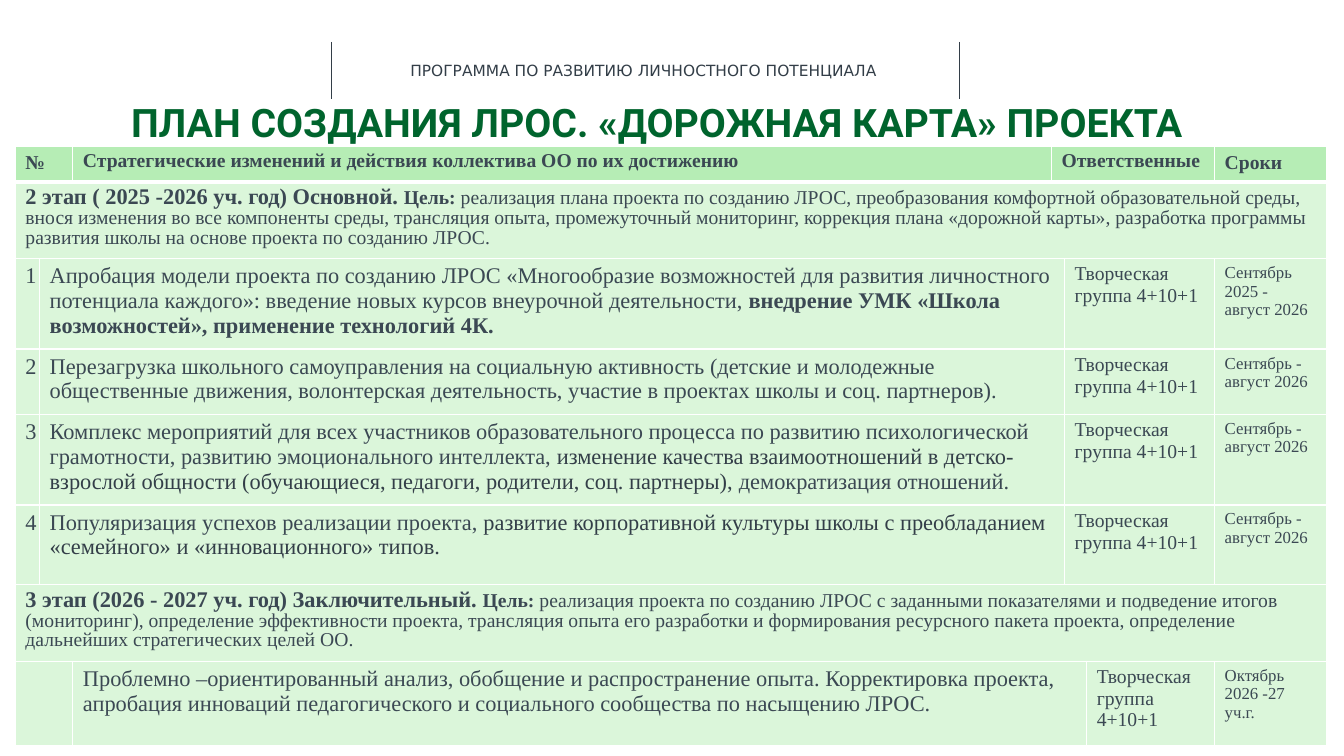
from pptx import Presentation
from pptx.dml.color import RGBColor
from pptx.enum.shapes import MSO_CONNECTOR
from pptx.enum.text import MSO_ANCHOR, PP_ALIGN
from pptx.oxml.ns import qn
from pptx.oxml.xmlchemy import OxmlElement as Element
from pptx.util import Pt

SERIF = "Times New Roman"
SLATE = "3B4853"
DARK = "333E48"
TEAM = "Творческая группа 4+10+1"
TERM = "Сентябрь - август 2026"


def paint(target, color):
    if hasattr(target, "solid"):
        target.solid()
        target = target.fore_color
    target.rgb = RGBColor.from_string(color)


def write(para, text, size=16, bold=False, color=SLATE, font=SERIF):
    span = para.add_run()
    span.text = text
    span.font.size = Pt(size)
    span.font.bold = bold
    span.font.name = font
    paint(span.font.color, color)


deck = Presentation()
deck.slide_width, deck.slide_height = Pt(960), Pt(540)
page = deck.slides.add_slide(deck.slide_layouts[5])

for x in (237, 685.5):
    rule = page.shapes.add_connector(MSO_CONNECTOR.STRAIGHT, Pt(x), Pt(30), Pt(x), Pt(70.5))
    rule.line.width = Pt(0.5)
    paint(rule.line.fill, DARK)
    rule._element.spPr.append(Element("a:effectLst"))

caption = page.shapes.add_textbox(Pt(286), Pt(40), Pt(351), Pt(21))
caption.text_frame.word_wrap = True
write(caption.text_frame.paragraphs[0], "ПРОГРАММА ПО РАЗВИТИЮ ЛИЧНОСТНОГО ПОТЕНЦИАЛА",
      size=11, color=DARK, font="DejaVu Sans")

title = page.shapes.title
title.left, title.top, title.width, title.height = Pt(1), Pt(74), Pt(936), Pt(30)
frame = title.text_frame
frame.word_wrap = True
frame.vertical_anchor = MSO_ANCHOR.TOP
frame.margin_left = frame.margin_right = frame.margin_top = frame.margin_bottom = 0
heading = frame.paragraphs[0]
heading.alignment = PP_ALIGN.CENTER
heading.line_spacing = 0.9
write(heading, "ПЛАН СОЗДАНИЯ ЛРОС. «ДОРОЖНАЯ КАРТА» ПРОЕКТА",
      size=28, bold=True, color="00642D", font="Roboto")

widths = [17.3, 23.8, 699, 9.4, 15.8, 91.4, 80]
heights = [25, 54.4, 64.8, 46.6, 64.8, 56.8, 54.6, 60.6]
grid = page.shapes.add_table(len(heights), len(widths), Pt(11), Pt(104.8),
                             Pt(sum(widths)), Pt(sum(heights))).table
grid.first_row = grid.horz_banding = False
for column, width in zip(grid.columns, widths):
    column.width = Pt(width)
for row, height in zip(grid.rows, heights):
    row.height = Pt(height)

for index, row in enumerate(grid.rows):
    for cell in row.cells:
        paint(cell.fill, "DBF6DA" if index else "B6EDB5")
        thick_sides = {0: "lnB", 1: "lnT"}
        for order, side in enumerate(("lnL", "lnR", "lnT", "lnB")):
            border = Element("a:" + side)
            border.set("w", str(Pt(3 if thick_sides.get(index) == side else 1)))
            fill = Element("a:solidFill")
            white = Element("a:srgbClr")
            white.set("val", "FFFFFF")
            fill.append(white)
            border.append(fill)
            cell._tc.find(qn("a:tcPr")).insert(order, border)

headers = [(0, 1, "№", 1), (2, 2, "Стратегические изменений и действия коллектива ОО по их достижению", 0.9),
           (3, 5, "Ответственные", 0.9), (6, 6, "Сроки", 1)]
for first, last, text, spacing in headers:
    cell = grid.cell(0, first)
    if last > first:
        cell.merge(grid.cell(0, last))
    para = cell.text_frame.paragraphs[0]
    para.line_spacing = spacing
    write(para, text, size=14, bold=True)

stages = {
    1: ("2 этап ( 2025 -2026 уч. год) Основной. ",
        "реализация плана проекта по созданию ЛРОС, преобразования комфортной образовательной среды, внося изменения во все компоненты среды, трансляция опыта, промежуточный мониторинг, коррекция плана «дорожной карты», разработка программы развития школы на основе проекта по созданию ЛРОС."),
    6: ("3 этап (2026 - 2027 уч. год) Заключительный. ",
        "реализация проекта по созданию ЛРОС с заданными показателями и подведение итогов (мониторинг), определение эффективности проекта, трансляция опыта его разработки и формирования ресурсного пакета проекта, определение дальнейших стратегических целей ОО."),
}
for index, (name, goal) in stages.items():
    cell = grid.cell(index, 0)
    cell.merge(grid.cell(index, 6))
    para = cell.text_frame.paragraphs[0]
    para.line_spacing = 0.9
    write(para, name, bold=True)
    write(para, "Цель: ", size=14, bold=True)
    write(para, goal, size=14)

actions = {
    2: ([("Апробация модели проекта по созданию ЛРОС «Многообразие возможностей для развития личностного потенциала каждого»: введение новых курсов внеурочной деятельности, ", {}),
         ("внедрение УМК «Школа возможностей», применение технологий 4К.", {"bold": True})],
        ["Сентябрь", "2025 - август 2026"]),
    3: ([("Перезагрузка школьного самоуправления на социальную активность (детские и молодежные общественные движения, волонтерская деятельность, участие в проектах школы и соц. партнеров).", {})],
        [TERM]),
    4: ([("Комплекс мероприятий для всех участников образовательного процесса по развитию психологической грамотности, развитию эмоционального интеллекта, ", {}),
         ("изменение качества взаимоотношений в детско-взрослой общности (обучающиеся, педагоги, родители, соц. партнеры),", {"color": DARK}),
         (" демократизация отношений.", {})],
        [TERM]),
    5: ([("Популяризация успехов реализации проекта, ", {}),
         ("развитие корпоративной культуры школы с преобладанием «семейного» и «инновационного» типов.", {"color": DARK})],
        [TERM]),
    7: ([("Проблемно –ориентированный анализ, обобщение и распространение опыта. Корректировка проекта, апробация инноваций педагогического и социального сообщества по насыщению ЛРОС.", {})],
        ["Октябрь", "2026 -27 уч.г."]),
}
for index, (spans, terms) in actions.items():
    final = index == 7
    task = grid.cell(index, 2 if final else 1)
    task.merge(grid.cell(index, 4 if final else 3))
    team = grid.cell(index, 5 if final else 4)
    if final:
        grid.cell(index, 0).merge(grid.cell(index, 1))
    else:
        team.merge(grid.cell(index, 5))
        write(grid.cell(index, 0).text_frame.paragraphs[0], str(index - 1))
    for text, style in spans:
        write(task.text_frame.paragraphs[0], text, **style)
    write(team.text_frame.paragraphs[0], TEAM, size=14)
    frame = grid.cell(index, 6).text_frame
    for order, text in enumerate(terms):
        para = frame.add_paragraph() if order else frame.paragraphs[0]
        write(para, text, size=12)

deck.save("out.pptx")
